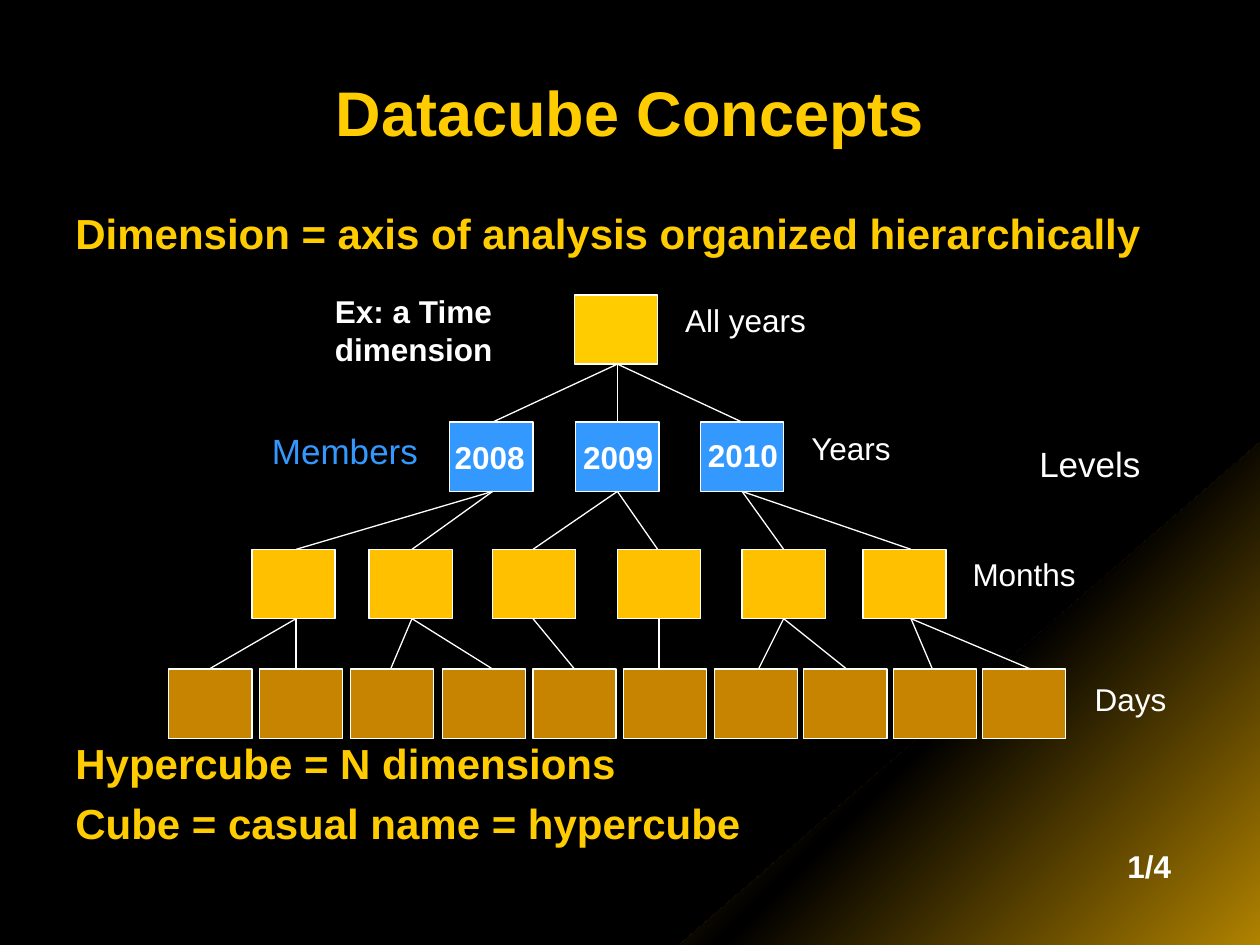
from copy import deepcopy
from dataclasses import dataclass

from lxml import etree
from pptx import Presentation
from pptx.dml.color import RGBColor as Rgb
from pptx.enum import shapes, text
from pptx.oxml import ns
from pptx.util import Inches, Pt


@dataclass(frozen=True)
class Theme:
    font: str = "Arial"
    black: Rgb = Rgb(0, 0, 0)
    white: Rgb = Rgb(255, 255, 255)
    gold: Rgb = Rgb.from_string("FFCC00")
    amber: Rgb = Rgb.from_string("FFC000")
    brown: Rgb = Rgb.from_string("C68400")
    blue: Rgb = Rgb.from_string("3399FF")
    glow: Rgb = Rgb.from_string("B08200")
    title: int = 36
    body: int = 24
    tag: int = 20
    label: int = 18
    line: float = 0.75


look = Theme()
deck = Presentation()
deck.slide_width, deck.slide_height = Inches(10), Inches(7.5)
slide = deck.slides.add_slide(deck.slide_layouts[6])
slide.background.fill.solid()
slide.background.fill.fore_color.rgb = look.black
items = slide.shapes


def write(lines, left, top, wide, high, size, color, bold=False):
    """Add a text box with one paragraph per line and return its frame."""
    box = items.add_textbox(Inches(left), Inches(top), Inches(wide), Inches(high))
    frame = box.text_frame
    frame.word_wrap = True
    frame.text = "\n".join(lines)
    for para in frame.paragraphs:
        font = para.font
        font.name, font.size, font.bold = look.font, Pt(size), bold
        font.color.rgb = color
    for para in frame.paragraphs[1:]:
        para.space_before = Pt(6)
    return frame


# Golden corner
pen = items.build_freeform(Inches(10), Inches(7.5))
pen.add_line_segments([(Inches(5.39), Inches(7.5)), (Inches(10), Inches(3.51))])
corner = pen.convert_to_shape()
corner.shadow.inherit = False
corner.line.fill.background()
corner.fill.gradient()
corner.fill.gradient_angle = 315
for stop in corner.fill.gradient_stops:
    stop.color.rgb = look.glow
stops = corner._element.spPr.find(".//" + ns.qn("a:gsLst"))
stops.insert(1, deepcopy(stops[0]))
for stop, place, color in zip(corner.fill.gradient_stops, (0, 0.5, 1),
                              (look.glow, look.black, look.glow)):
    stop.position = place
    stop.color.rgb = color

# Title and statements
head = write(["Datacube Concepts"], 0.5, 0.3, 9, 1.16, look.title, look.gold, True)
head.vertical_anchor = text.MSO_ANCHOR.MIDDLE
head.paragraphs[0].alignment = text.PP_ALIGN.CENTER
write(["Dimension = axis of analysis organized hierarchically"],
      0.5, 1.6, 9, 0.5, look.body, look.gold, True)
write(["Hypercube = N dimensions", "Cube = casual name = hypercube"],
      0.5, 5.8, 9, 0.91, look.body, look.gold, True)

# Levels: top, fill, left edges of boxes, links from (parent x, child x)
high = 0.55
levels = [
    (2.34, look.gold, [4.56], []),
    (3.35, look.blue, [3.57, 4.57, 5.56],
     [(4.9, 3.91), (4.9, 4.9), (4.9, 5.89)]),
    (4.36, look.amber, [2, 2.93, 3.91, 4.9, 5.89, 6.85],
     [(3.91, 2.35), (3.91, 3.27), (4.9, 4.23),
      (4.9, 5.22), (5.89, 6.22), (5.89, 7.23)]),
    (5.31, look.brown, [1.34, 2.06, 2.78, 3.51, 4.23, 4.95, 5.67, 6.38, 7.09, 7.8],
     [(2.35, 1.66), (2.35, 2.35), (3.27, 3.1), (3.27, 3.91), (4.23, 4.56),
      (5.23, 5.23), (6.22, 6.02), (6.22, 6.72), (7.23, 7.4), (7.23, 8.18)]),
]
base = 0
for top, color, lefts, links in levels:
    for left in lefts:
        box = items.add_shape(shapes.MSO_SHAPE.RECTANGLE, Inches(left),
                              Inches(top), Inches(0.66), Inches(high))
        box.shadow.inherit = False
        box.fill.solid()
        box.fill.fore_color.rgb = color
        box.line.color.rgb = look.white
        box.line.width = Pt(look.line)
    for start, end in links:
        link = items.add_connector(shapes.MSO_CONNECTOR.STRAIGHT, Inches(start),
                                   Inches(base), Inches(end), Inches(top))
        link.line.color.rgb = look.white
        link.line.width = Pt(look.line)
        etree.SubElement(link._element.spPr, ns.qn("a:effectLst"))
    base = top + high

# Member names
write(["Members"], 2.06, 3.36, 1.76, 0.44, look.tag, look.blue)
for year, left, top in [("2008", 3.51, 3.43), ("2009", 4.53, 3.43), ("2010", 5.52, 3.41)]:
    write([year], left, top, 0.76, 0.4, look.label, look.white, True)

# Level names
for name, left, top, wide in [("All years", 5.34, 2.34, 2.57), ("Years", 6.34, 3.36, 1.25),
                              ("Months", 7.62, 4.36, 1.52), ("Days", 8.59, 5.35, 1.03)]:
    write([name], left, top, wide, 0.5, look.label, look.white)
write(["Levels"], 8.15, 3.46, 1.4, 0.43, look.tag, look.white)

write(["Ex: a Time dimension"], 2.56, 2.27, 1.81, 0.71, look.label, look.white, True)
write(["1/4"], 8.85, 6.67, 0.83, 0.5, look.label, look.white, True)

deck.save("out.pptx")
